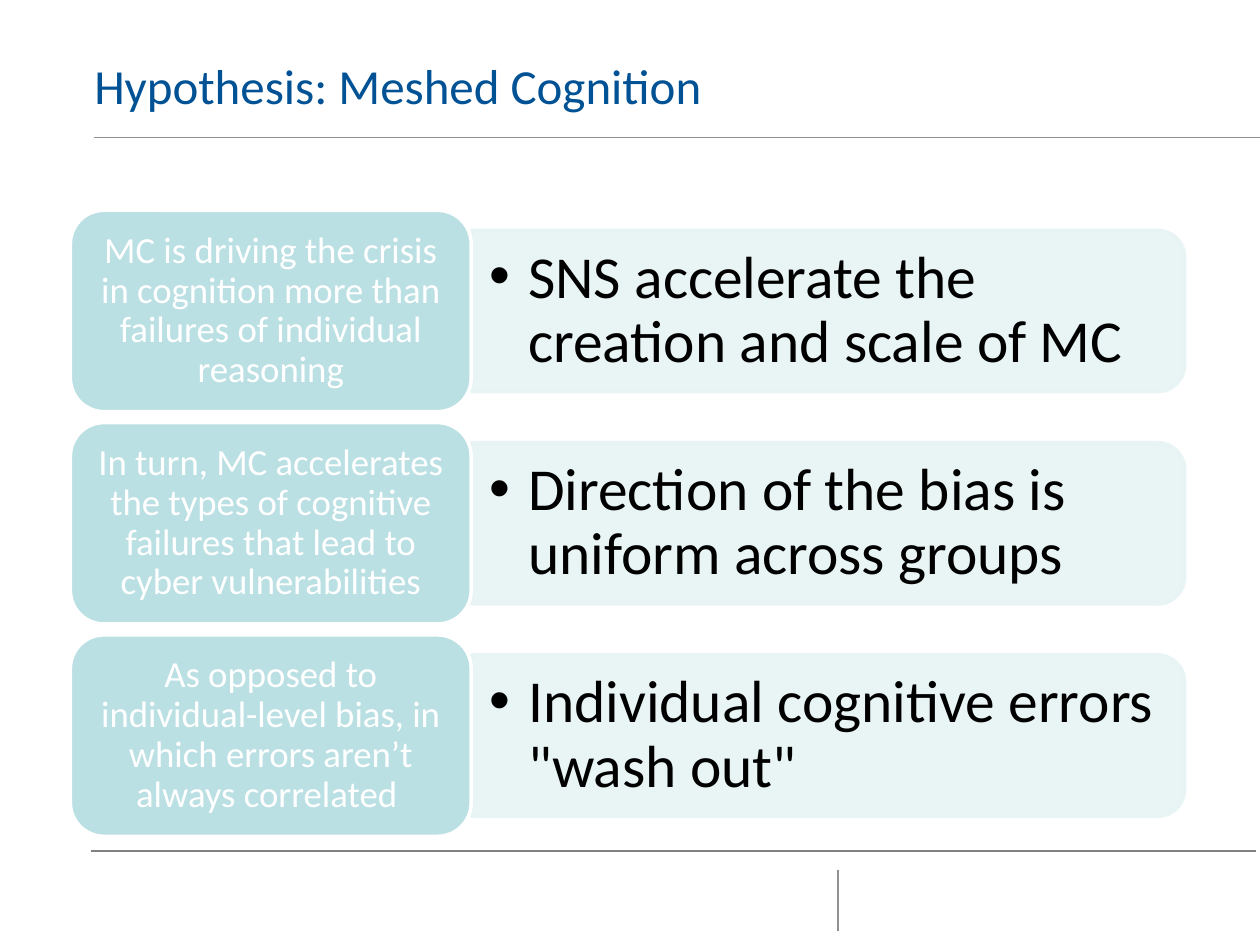
"""Build the Meshed Cognition hypothesis slide."""
from lxml import etree
from pptx import Presentation
from pptx.dml.color import RGBColor
from pptx.enum.shapes import MSO_CONNECTOR, MSO_SHAPE
from pptx.enum.text import MSO_ANCHOR, PP_ALIGN
from pptx.oxml.ns import qn
from pptx.util import Cm, Pt

STRAIGHT = MSO_CONNECTOR.STRAIGHT
ROUNDED = MSO_SHAPE.ROUNDED_RECTANGLE
ROUNDED_TOP = MSO_SHAPE.ROUND_2_SAME_RECTANGLE
TOP, MIDDLE = MSO_ANCHOR.TOP, MSO_ANCHOR.MIDDLE
LEFT, CENTER = PP_ALIGN.LEFT, PP_ALIGN.CENTER

BLUE = RGBColor(0x00, 0x52, 0x95)
GRAY = RGBColor(0x80, 0x80, 0x80)
LIGHT_GRAY = RGBColor(0x91, 0x91, 0x94)
TEAL = RGBColor(0xBB, 0xE0, 0xE3)
PALE_TEAL = RGBColor(0xE7, 0xF3, 0xF4)
WHITE = RGBColor(0xFF, 0xFF, 0xFF)
BLACK = RGBColor(0x00, 0x00, 0x00)

CLAIMS = [
    ("MC is driving the crisis in cognition more than failures of individual reasoning",
     "SNS accelerate the creation and scale of MC"),
    ("In turn, MC accelerates the types of cognitive failures that lead to cyber vulnerabilities",
     "Direction of the bias is uniform across groups"),
    ("As opposed to individual-level bias, in which errors aren’t always correlated ",
     'Individual cognitive errors "wash out"'),
]
RULES = [
    (1.83, 17.15, 25.32, 17.15, GRAY),
    (1.9, 2.77, 25.4, 2.77, LIGHT_GRAY),
    (16.89, 18.77, 16.89, 17.53, LIGHT_GRAY),
]
FIRST_CENTER, ROW_PITCH = 6.27, 4.28
CARD_LEFT, CARD_WIDTH, CARD_HEIGHT = 1.42, 8.08, 4.06
BAR_LEFT, BAR_LENGTH, BAR_THICKNESS = CARD_LEFT + CARD_WIDTH, 14.38, 3.25
POINT_WIDTH, POINT_HEIGHT = 14.22, 2.95


def write(shape, text, size, color, align, anchor, spacing, inset_x, inset_y):
    frame = shape.text_frame
    frame.word_wrap = True
    frame.vertical_anchor = anchor
    frame.margin_left = frame.margin_right = Cm(inset_x)
    frame.margin_top = frame.margin_bottom = Cm(inset_y)
    paragraph = frame.paragraphs[0]
    paragraph.alignment = align
    paragraph.line_spacing = spacing
    run = paragraph.add_run()
    run.text = text
    run.font.name = "Calibri"
    run.font.size = Pt(size)
    run.font.color.rgb = color
    return paragraph


def add_panel(preset, left, top, width, height, fill, outline):
    panel = slide.shapes.add_shape(preset, Cm(left), Cm(top), Cm(width), Cm(height))
    panel.shadow.inherit = False
    panel.fill.solid()
    panel.fill.fore_color.rgb = fill
    panel.line.color.rgb = outline
    panel.line.width = Pt(2)
    return panel


prs = Presentation()
prs.slide_width, prs.slide_height = Cm(25.4), Cm(19.05)
slide = prs.slides.add_slide(prs.slide_layouts[5])

title = slide.shapes.title
title.left, title.top, title.width, title.height = Cm(1.9), Cm(1.17), Cm(21.92), Cm(2.64)
write(title, "Hypothesis: Meshed Cognition", 28, BLUE, LEFT, TOP, Pt(32), 0, 0)

for x1, y1, x2, y2, color in RULES:
    rule = slide.shapes.add_connector(STRAIGHT, Cm(x1), Cm(y1), Cm(x2), Cm(y2))
    rule.line.color.rgb = color
    rule.line.width = Pt(1)
    etree.SubElement(rule._element.spPr, qn("a:effectLst"))

for row, (claim, point) in enumerate(CLAIMS):
    center = FIRST_CENTER + row * ROW_PITCH

    bar = add_panel(ROUNDED_TOP, BAR_LEFT + (BAR_LENGTH - BAR_THICKNESS) / 2,
                    center - BAR_LENGTH / 2, BAR_THICKNESS, BAR_LENGTH, PALE_TEAL, PALE_TEAL)
    bar.rotation = 90
    for color_node in bar._element.spPr.iter(qn("a:srgbClr")):
        etree.SubElement(color_node, qn("a:alpha"), val="90000")

    point_box = slide.shapes.add_textbox(Cm(BAR_LEFT), Cm(center - POINT_HEIGHT / 2),
                                         Cm(POINT_WIDTH), Cm(POINT_HEIGHT))
    bullet_line = write(point_box, point, 34, BLACK, LEFT, MIDDLE, 0.9, 0.36, 0.18)
    properties = bullet_line._p.get_or_add_pPr()
    properties.set("marL", str(Cm(0.79)))
    properties.set("indent", str(-Cm(0.79)))
    etree.SubElement(properties, qn("a:buFont"), typeface="Arial")
    etree.SubElement(properties, qn("a:buChar"), char="•")

    card = add_panel(ROUNDED, CARD_LEFT, center - CARD_HEIGHT / 2,
                     CARD_WIDTH, CARD_HEIGHT, TEAL, WHITE)
    write(card, claim, 21, WHITE, CENTER, MIDDLE, 0.9, 0.23, 0.11)

prs.save("out.pptx")
